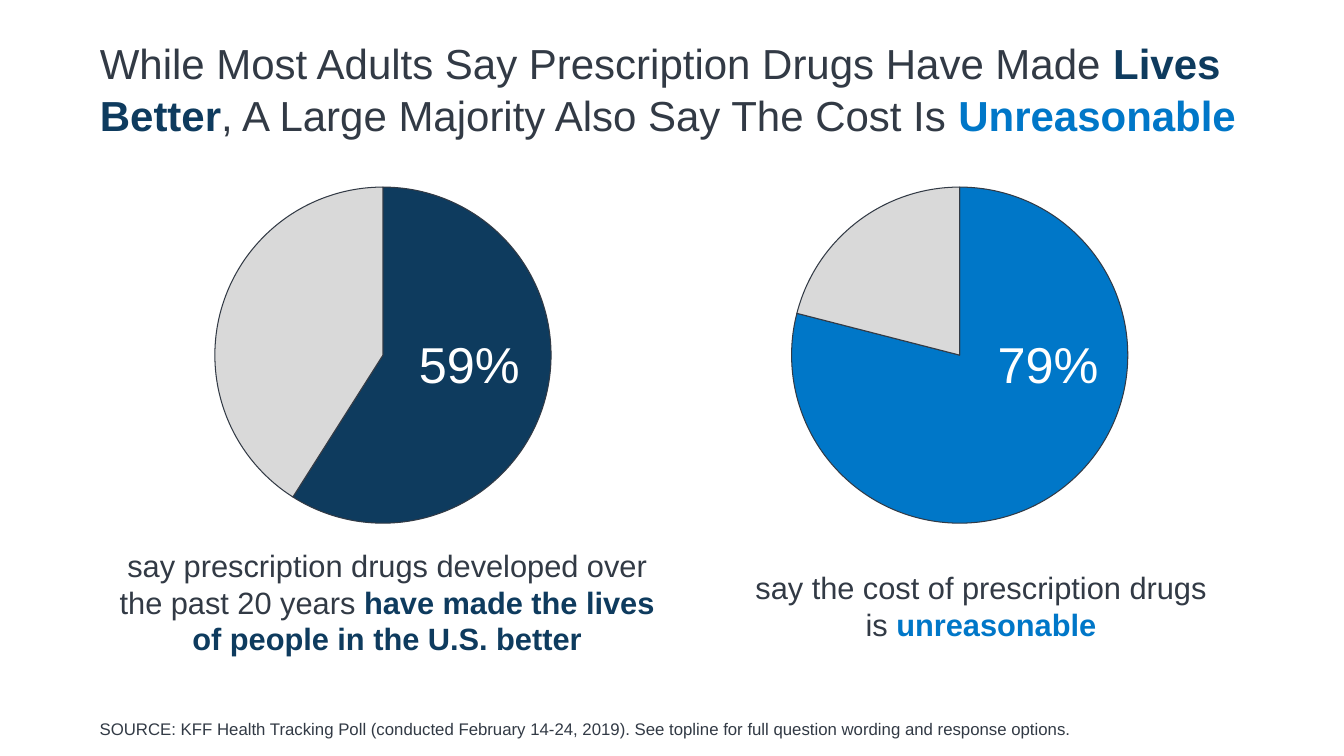
from lxml import etree
from pptx import Presentation
from pptx.chart.data import CategoryChartData
from pptx.dml.color import RGBColor
from pptx.enum.chart import XL_CHART_TYPE
from pptx.enum.text import MSO_ANCHOR, MSO_AUTO_SIZE, PP_ALIGN
from pptx.oxml.ns import qn
from pptx.util import Inches, Pt

PIE = XL_CHART_TYPE.PIE
TOP, BOTTOM = MSO_ANCHOR.TOP, MSO_ANCHOR.BOTTOM
LEFT, CENTER = PP_ALIGN.LEFT, PP_ALIGN.CENTER
NO_FIT = MSO_AUTO_SIZE.NONE

FONT = "Arial"
INK, NAVY, BLUE, GRAY, WHITE = "323A45", "0E3B5E", "0077C8", "D9D9D9", "FFFFFF"
PLOT_AREA = {"x": 0.199, "y": 0.126, "w": 0.738, "h": 0.864}


def color(hex_string):
    return RGBColor.from_string(hex_string)


class PollSlide:
    def __init__(self, deck):
        self.page = deck.slides.add_slide(deck.slide_layouts[5])

    def fill_text(self, shape, spans, size, align, anchor):
        """Each span is (text, color, bold)."""
        frame = shape.text_frame
        frame.word_wrap = True
        frame.auto_size = NO_FIT
        frame.vertical_anchor = anchor
        para = frame.paragraphs[0]
        para.alignment = align
        para.font.name = FONT
        para.font.size = Pt(size)
        for text, hex_string, bold in spans:
            span = para.add_run()
            span.text = text
            span.font.bold = bold
            span.font.color.rgb = color(hex_string)
        return frame

    def title(self, spans, left, top, width, height):
        title = self.page.shapes.title
        title.left, title.top = Inches(left), Inches(top)
        title.width, title.height = Inches(width), Inches(height)
        frame = self.fill_text(title, spans, 30, LEFT, TOP)
        frame.margin_top = Inches(0.08)
        frame.paragraphs[0].line_spacing = 1.03

    def text(self, spans, left, top, width, height, size, align=CENTER, anchor=TOP):
        box = self.page.shapes.add_textbox(
            Inches(left), Inches(top), Inches(width), Inches(height))
        self.fill_text(box, spans, size, align, anchor)

    def pie(self, share, hex_string, left):
        data = CategoryChartData()
        data.categories = ["1", "2"]
        data.add_series("Series 1", (share, 100 - share))
        chart = self.page.shapes.add_chart(
            PIE, Inches(left), Inches(1.37), Inches(4.98), Inches(3.86), data).chart
        chart.has_legend = False
        chart.has_title = False
        chart.font.name = FONT
        chart.font.size = Pt(10)
        chart.font.color.rgb = color("000000")
        plot = chart.plots[0]
        plot.vary_by_categories = True
        for index, slice_color in enumerate((hex_string, GRAY)):
            style = plot.series[0].points[index].format
            style.fill.solid()
            style.fill.fore_color.rgb = color(slice_color)
            style.line.color.rgb = color(INK)
            style.line.width = Pt(0.75)
        self.place_plot(chart)

    def place_plot(self, chart):
        area = chart.element.find(".//" + qn("c:plotArea"))
        layout = area.find(qn("c:layout"))
        if layout is None:
            layout = etree.Element(qn("c:layout"))
            area.insert(0, layout)
        manual = etree.SubElement(layout, qn("c:manualLayout"))
        settings = {"layoutTarget": "inner", "xMode": "edge", "yMode": "edge", **PLOT_AREA}
        for name, value in settings.items():
            etree.SubElement(manual, qn("c:" + name)).set("val", str(value))


def main():
    deck = Presentation()
    deck.slide_width, deck.slide_height = Inches(13.33), Inches(7.5)
    slide = PollSlide(deck)

    # Title
    slide.title([
        ("While Most Adults Say Prescription Drugs Have Made ", INK, False),
        ("Lives Better", NAVY, True),
        (", A Large Majority Also Say The Cost Is ", INK, False),
        ("Unreasonable", BLUE, True),
    ], 0.89, 0.28, 12.31, 1)

    # Pies with their percentages
    for share, hex_string, pie_left, label_left in (
            (59, NAVY, 0.97, 3.44), (79, BLUE, 6.69, 9.18)):
        slide.pie(share, hex_string, pie_left)
        slide.text([(f"{share}%", WHITE, False)], label_left, 3.26, 2.43, 0.71, 36)

    # Captions
    slide.text([
        ("say prescription drugs developed over the past 20 years ", INK, False),
        ("have made the lives of people in the U.S. better", NAVY, True),
    ], 1.04, 5.37, 5.6, 1.21, 22)
    slide.text([
        ("say the cost of prescription drugs is ", INK, False),
        ("unreasonable", BLUE, True),
    ], 7.31, 5.59, 4.84, 0.84, 22)

    # Source line
    slide.text([
        ("SOURCE: KFF Health Tracking Poll (conducted February 14-24, 2019). "
         "See topline for full question wording and response options.", INK, False),
    ], 0.89, 6.78, 11.97, 0.6, 12, LEFT, BOTTOM)

    deck.save("out.pptx")


if __name__ == "__main__":
    main()
